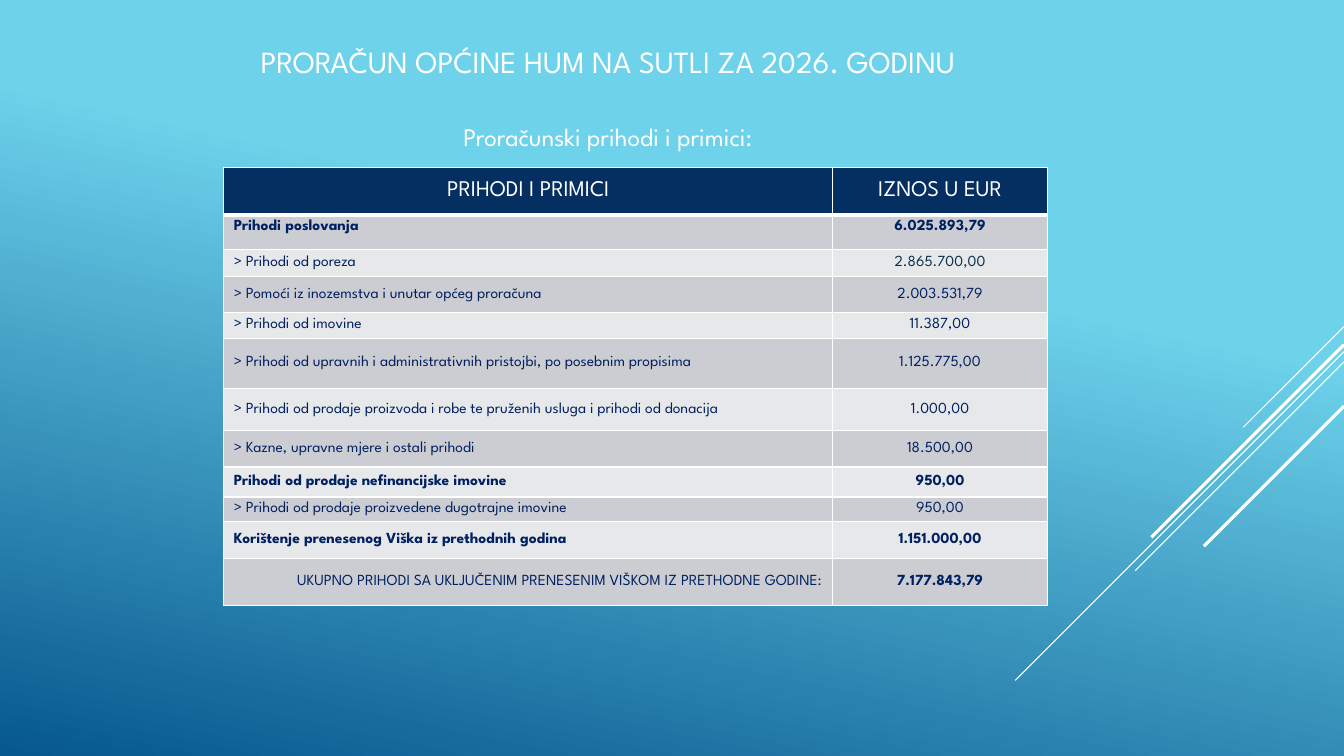
from dataclasses import dataclass

from lxml import etree
from pptx import Presentation
from pptx.dml.color import RGBColor
from pptx.enum.shapes import MSO_CONNECTOR
from pptx.enum.text import MSO_ANCHOR, MSO_AUTO_SIZE, PP_ALIGN
from pptx.oxml.ns import qn
from pptx.util import Inches, Pt

STRAIGHT = MSO_CONNECTOR.STRAIGHT
TOP, MIDDLE = MSO_ANCHOR.TOP, MSO_ANCHOR.MIDDLE
LEFT, CENTER, RIGHT = PP_ALIGN.LEFT, PP_ALIGN.CENTER, PP_ALIGN.RIGHT
NO_AUTOFIT = MSO_AUTO_SIZE.NONE


@dataclass(frozen=True)
class Theme:
    font: str = "League Spartan"
    white: str = "FFFFFF"
    sky: str = "6ED2EB"
    deep: str = "06588E"
    header: str = "052F61"
    ink: str = "002060"
    muted_ink: str = "0A304A"
    bands: tuple = ("CCCDD2", "E7E8EA")
    title_size: float = 22
    subtitle_size: float = 18
    header_size: float = 16
    body_size: float = 11
    thin: float = 0.75
    thick: float = 2.25
    border: float = 1
    header_rule: float = 3


@dataclass(frozen=True)
class BudgetRow:
    label: str
    amount: str
    height: float
    bold_label: bool = False
    bold_amount: bool = False
    label_align: PP_ALIGN = LEFT
    anchor: MSO_ANCHOR = MIDDLE
    amount_color: str = Theme.ink


HEADINGS = ("PRIHODI I PRIMICI", "IZNOS U EUR")
HEADING_HEIGHT = 6.27
COLUMN_WIDTHS = (45.31, 15.98)
BUDGET = (
    BudgetRow("Prihodi poslovanja", "6.025.893,79", 4.6, True, True, anchor=TOP),
    BudgetRow("> Prihodi od poreza", "2.865.700,00", 3.6, amount_color=Theme.muted_ink),
    BudgetRow("> Pomoći iz inozemstva i unutar općeg proračuna", "2.003.531,79", 4.7),
    BudgetRow("> Prihodi od imovine", "11.387,00", 3.45),
    BudgetRow("> Prihodi od upravnih i administrativnih pristojbi, po posebnim propisima",
              "1.125.775,00", 6.6),
    BudgetRow("> Prihodi od prodaje proizvoda i robe te pruženih usluga i prihodi od donacija",
              "1.000,00", 5.65),
    BudgetRow("> Kazne, upravne mjere i ostali prihodi", "18.500,00", 4.8),
    BudgetRow("Prihodi od prodaje nefinancijske imovine", "950,00", 3.95, True, True),
    BudgetRow("> Prihodi od prodaje proizvedene dugotrajne imovine", "950,00", 3.2),
    BudgetRow("Korištenje prenesenog Viška iz prethodnih godina", "1.151.000,00", 4.9, True, True),
    BudgetRow("UKUPNO PRIHODI SA UKLJUČENIM PRENESENIM VIŠKOM IZ PRETHODNE GODINE:",
              "7.177.843,79", 6.3, bold_amount=True, label_align=RIGHT),
)
# Height at the right edge, drop, weight
RAYS = (
    (43.2, 13.33, Theme.thin),
    (46.53, 43.47, Theme.thin),
    (47.87, 27.6, Theme.thin),
    (45.6, 25.47, Theme.thick),
    (53.73, 18.53, Theme.thick),
)


class BudgetSlide:
    """Draws on one slide; lengths are percentages of its width and height."""

    def __init__(self, deck, theme):
        self.deck, self.theme = deck, theme
        self.slide = deck.slides.add_slide(deck.slide_layouts[5])

    def x(self, share):
        return round(self.deck.slide_width * share / 100)

    def y(self, share):
        return round(self.deck.slide_height * share / 100)

    def style(self, paragraph, size, color, align, bold=False):
        paragraph.alignment = align
        font = paragraph.font
        font.name, font.size, font.bold = self.theme.font, Pt(size), bold
        font.color.rgb = RGBColor.from_string(color)

    def background(self, angle):
        """Fill with a gradient whose angle runs counter-clockwise."""
        fill = self.slide.background.fill
        fill.gradient()
        fill.gradient_angle = angle
        shades = ((0.35, self.theme.sky), (1, self.theme.deep))
        for stop, (position, color) in zip(fill.gradient_stops, shades):
            stop.position = position
            stop.color.rgb = RGBColor.from_string(color)

    def title(self, heading, subtitle, left, top, width, height):
        title = self.slide.shapes.title
        title.left, title.top = self.x(left), self.y(top)
        title.width, title.height = self.x(width), self.y(height)
        frame = title.text_frame
        frame.auto_size, frame.word_wrap = NO_AUTOFIT, True
        frame.vertical_anchor = MIDDLE
        frame.margin_top = self.y(2.1)
        frame.text = heading
        self.style(frame.paragraphs[0], self.theme.title_size, self.theme.white, CENTER)
        second = frame.add_paragraph()
        second.text = subtitle
        second.space_before = Pt(30)
        self.style(second, self.theme.subtitle_size, self.theme.white, CENTER)

    def ray(self, top, drop, weight):
        """Draw a 45-degree line falling from the right edge."""
        right, fall = self.deck.slide_width, self.y(drop)
        line = self.slide.shapes.add_connector(
            STRAIGHT, right, self.y(top), right - fall, self.y(top) + fall)
        line.line.color.rgb = RGBColor.from_string(self.theme.white)
        line.line.width = Pt(weight)
        etree.SubElement(line._element.spPr, qn("a:effectLst"))

    def borders(self, cell, top, bottom):
        properties = cell._tc.get_or_add_tcPr()
        sides = (("L", self.theme.border), ("R", self.theme.border), ("T", top), ("B", bottom))
        for side, weight in sides:
            edge = etree.SubElement(properties, qn(f"a:ln{side}"), w=str(Pt(weight)))
            paint = etree.SubElement(edge, qn("a:solidFill"))
            etree.SubElement(paint, qn("a:srgbClr"), val=self.theme.white)

    def cell(self, cell, text, fill, size, color, align, bold=False, anchor=MIDDLE,
             top=Theme.border, bottom=Theme.border):
        self.borders(cell, top, bottom)
        cell.fill.solid()
        cell.fill.fore_color.rgb = RGBColor.from_string(fill)
        cell.vertical_anchor = anchor
        cell.text = text
        self.style(cell.text_frame.paragraphs[0], size, color, align, bold)

    def table(self, left, top, widths, headings, heading_height, entries):
        theme = self.theme
        heights = [heading_height] + [entry.height for entry in entries]
        table = self.slide.shapes.add_table(
            len(heights), len(widths), self.x(left), self.y(top),
            self.x(sum(widths)), self.y(sum(heights))).table
        table.horz_banding = False
        for column, width in zip(table.columns, widths):
            column.width = self.x(width)
        for row, height in zip(table.rows, heights):
            row.height = self.y(height)
        for column, heading in enumerate(headings):
            self.cell(table.cell(0, column), heading, theme.header, theme.header_size,
                      theme.white, CENTER, bottom=theme.header_rule)
        for number, entry in enumerate(entries):
            band = theme.bands[number % 2]
            rule = theme.border if number else theme.header_rule
            label, amount = table.rows[number + 1].cells
            self.cell(label, entry.label, band, theme.body_size, theme.ink,
                      entry.label_align, entry.bold_label, entry.anchor, rule)
            self.cell(amount, entry.amount, band, theme.body_size, entry.amount_color,
                      CENTER, entry.bold_amount, entry.anchor, rule)


def main():
    deck = Presentation()
    deck.slide_width, deck.slide_height = Inches(13.33), Inches(7.5)
    budget = BudgetSlide(deck, Theme())
    budget.background(258)
    for ray in RAYS:
        budget.ray(*ray)
    budget.title("PRORAČUN OPĆINE HUM NA SUTLI ZA 2026. GODINU",
                 "Proračunski prihodi i primici:", 5.55, 2.13, 79.37, 20)
    budget.table(16.65, 22.13, COLUMN_WIDTHS, HEADINGS, HEADING_HEIGHT, BUDGET)
    deck.save("out.pptx")


if __name__ == "__main__":
    main()
